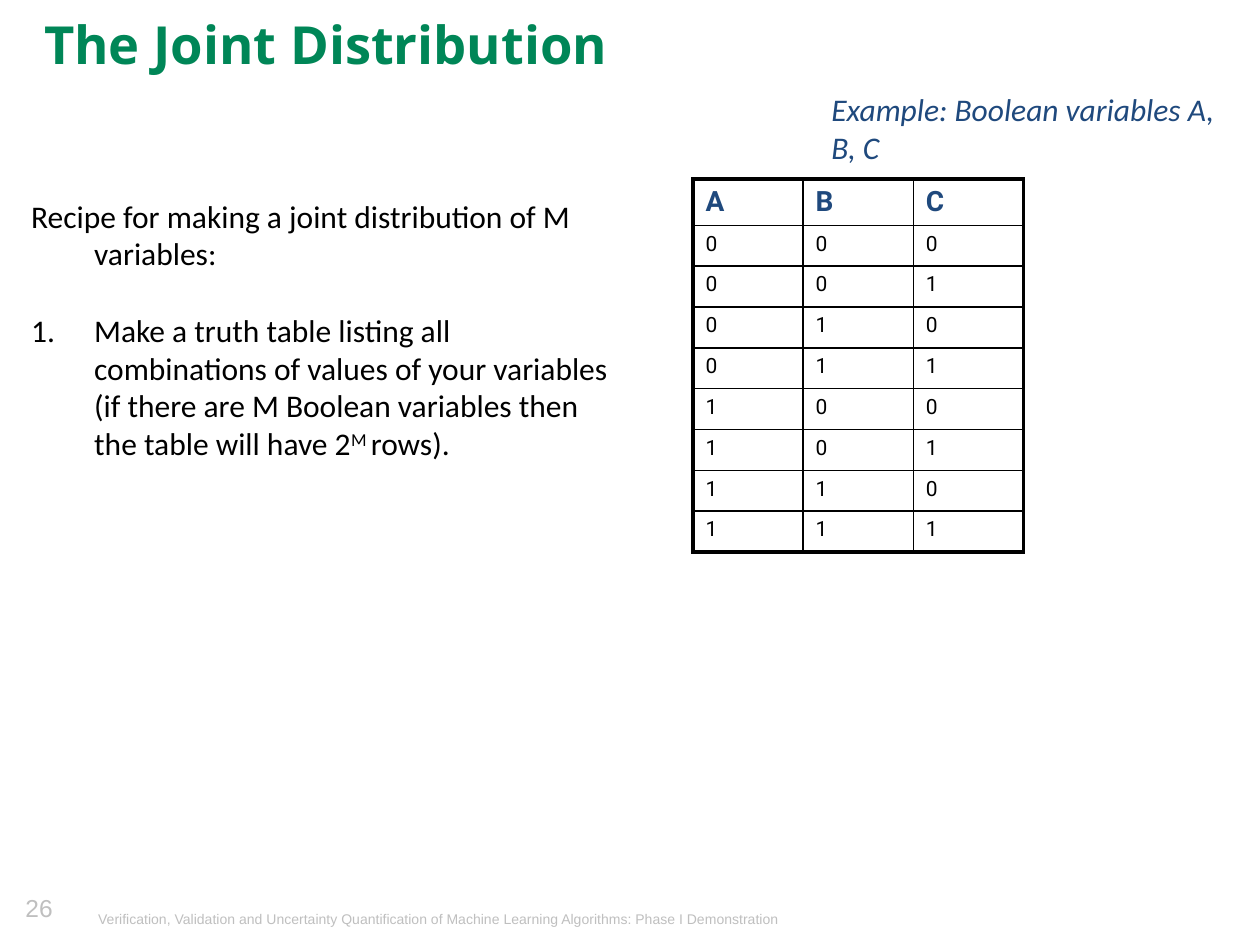
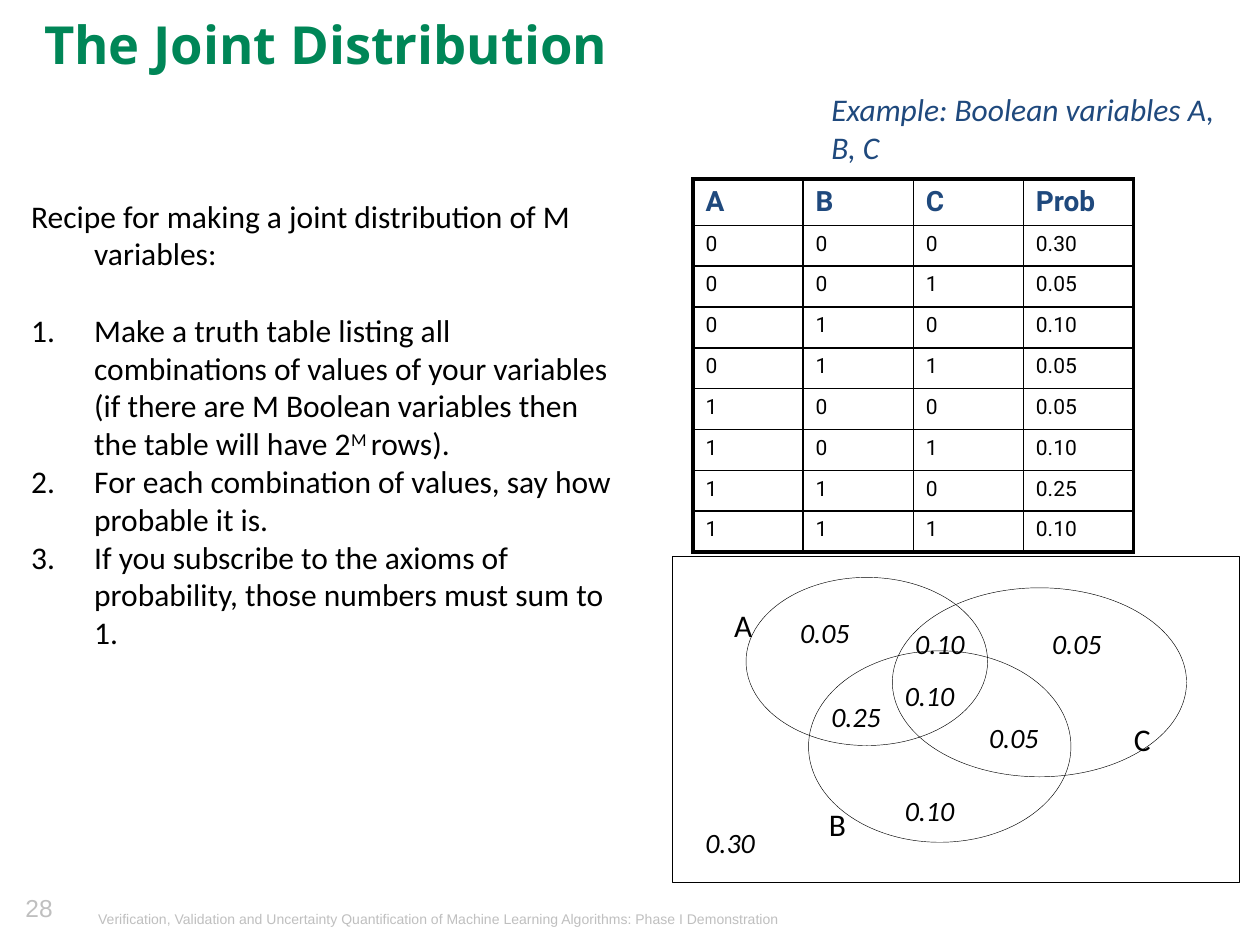
from dataclasses import dataclass
from itertools import product

from lxml import etree
from pptx import Presentation
from pptx.dml.color import RGBColor
from pptx.enum.shapes import MSO_SHAPE
from pptx.enum.text import MSO_ANCHOR, PP_ALIGN
from pptx.oxml.ns import qn
from pptx.util import Cm, Pt

RECTANGLE, ELLIPSE = MSO_SHAPE.RECTANGLE, MSO_SHAPE.OVAL
LEFT, CENTER = PP_ALIGN.LEFT, PP_ALIGN.CENTER
TOP = MSO_ANCHOR.TOP


@dataclass(frozen=True)
class Theme:
    green: str = "008657"
    navy: str = "1F497D"
    black: str = "000000"
    grey: str = "BFBFBF"
    title_font: str = "Open Sans"
    body_font: str = "Calibri"
    table_font: str = "Roboto"
    footer_font: str = "Arial"
    title_size: float = 30
    body_size: float = 18
    value_size: float = 16
    header_size: float = 16
    cell_size: float = 12
    number_size: float = 14
    footer_size: float = 8
    outer_border: float = 2.25
    inner_border: float = 1
    outline: float = 0.25


THEME = Theme()

TITLE = "The Joint Distribution"
FOOTER = ("Verification, Validation and Uncertainty Quantification of "
          "Machine Learning Algorithms: Phase I Demonstration")
EXAMPLE = "Example: Boolean variables A, B, C"
RECIPE = "Recipe for making a joint distribution of M variables:"
# A step is a list of (text, is superscript) pieces
STEPS = [
    [("Make a truth table listing all combinations of values of your variables "
      "(if there are M Boolean variables then the table will have 2", False),
     ("M ", True), ("rows).", False)],
    [("For each combination of values, say how probable it is.", False)],
    [("If you subscribe to the axioms of probability, those numbers must sum to 1.",
      False)],
]

VARIABLES = ["A", "B", "C"]
COMBINATIONS = list(product("01", repeat=len(VARIABLES)))
PROBABILITIES = ["0.30", "0.05", "0.10", "0.05", "0.05", "0.10", "0.25", "0.10"]

# Venn diagram, in cm; value positions follow the order of COMBINATIONS
VENN_FRAME = (13.55, 11.22, 11.43, 6.56)
VENN_SETS = {
    "A": (15.04, 11.64, 4.87, 3.39),
    "B": (16.3, 13.12, 5.29, 3.86),
    "C": (17.99, 11.85, 5.93, 3.81),
}
SET_LABELS = {"A": (14.55, 12.09), "B": (16.46, 16.1), "C": (22.61, 14.4)}
VALUE_POSITIONS = [
    (13.97, 16.51), (20.96, 12.5), (17.99, 15.88), (19.69, 14.4),
    (15.88, 12.28), (18.2, 12.5), (16.51, 13.97), (17.99, 13.55),
]


def write_text(para, text, *, size, font=THEME.body_font, color=THEME.black,
               bold=False, italic=False, superscript=False, align=LEFT,
               line_spacing=None):
    """Append one formatted span to a paragraph."""
    para.alignment = align
    if line_spacing:
        para.line_spacing = line_spacing
    span = para.add_run()
    span.text = text
    span.font.name = font
    span.font.size = Pt(size)
    span.font.bold = bold
    span.font.italic = italic
    span.font.color.rgb = RGBColor.from_string(color)
    if superscript:
        span._r.get_or_add_rPr().set("baseline", "30000")


def add_box(page, place, wrap=True, inset=True):
    """Add an empty text box and return its text frame."""
    frame = page.shapes.add_textbox(*map(Cm, place)).text_frame
    frame.word_wrap = wrap
    frame.vertical_anchor = TOP
    if not inset:
        frame.margin_left = frame.margin_right = 0
        frame.margin_top = frame.margin_bottom = 0
    return frame


def add_label(page, place, text, wrap=True, inset=True, **text_format):
    write_text(add_box(page, place, wrap, inset).paragraphs[0], text, **text_format)


def set_hanging_indent(para, numbered=False):
    properties = para._p.get_or_add_pPr()
    properties.set("marL", str(Cm(1.27)))
    properties.set("indent", str(-Cm(1.27)))
    if numbered:
        etree.SubElement(properties, qn("a:buAutoNum"), type="arabicPeriod")


def add_recipe(page, steps):
    frame = add_box(page, (0.38, 3.84, 12.32, 7.04))
    intro = frame.paragraphs[0]
    set_hanging_indent(intro)
    intro.space_after = Pt(22)
    write_text(intro, RECIPE, size=THEME.body_size)
    for step in steps:
        para = frame.add_paragraph()
        set_hanging_indent(para, numbered=True)
        for text, superscript in step:
            write_text(para, text, size=THEME.body_size, superscript=superscript)


def set_borders(cell, outer_sides):
    """Draw all four borders, heavier on the outer sides of the table."""
    properties = cell._tc.get_or_add_tcPr()
    for position, side in enumerate("LRTB"):
        width = THEME.outer_border if side in outer_sides else THEME.inner_border
        line = etree.Element(qn(f"a:ln{side}"), w=str(Pt(width)))
        fill = etree.SubElement(line, qn("a:solidFill"))
        etree.SubElement(fill, qn("a:srgbClr"), val=THEME.black)
        properties.insert(position, line)


def add_truth_table(page, header, rows):
    column_width, header_height, total_height = 2.22, 0.91, 7.5
    row_height = (total_height - header_height) / len(rows)
    lines = [header, *rows]
    table = page.shapes.add_table(
        len(lines), len(header), Cm(13.97), Cm(3.61),
        Cm(column_width * len(header)), Cm(total_height)).table
    table.first_row = table.horz_banding = False
    for column in table.columns:
        column.width = Cm(column_width)
    last_row, last_column = len(lines) - 1, len(header) - 1
    for r, values in enumerate(lines):
        table.rows[r].height = Cm(row_height if r else header_height)
        for c, value in enumerate(values):
            cell = table.cell(r, c)
            cell.fill.background()
            edges = {"L": c == 0, "R": c == last_column,
                     "T": r == 0, "B": r == last_row}
            set_borders(cell, [side for side, is_outer in edges.items() if is_outer])
            write_text(cell.text_frame.paragraphs[0], value,
                       font=THEME.table_font, bold=r == 0,
                       size=THEME.cell_size if r else THEME.header_size,
                       color=THEME.black if r else THEME.navy)


def add_outline(page, kind, place):
    shape = page.shapes.add_shape(kind, *map(Cm, place))
    shape.shadow.inherit = False
    shape.fill.background()
    shape.line.color.rgb = RGBColor.from_string(THEME.black)
    shape.line.width = Pt(THEME.outline)


def add_venn_diagram(page):
    add_outline(page, RECTANGLE, VENN_FRAME)
    for place in VENN_SETS.values():
        add_outline(page, ELLIPSE, place)
    for name, position in SET_LABELS.items():
        add_label(page, (*position, 0.94, 1.09), name, wrap=False,
                  size=THEME.body_size)
    for value, position in zip(PROBABILITIES, VALUE_POSITIONS):
        add_label(page, (*position, 1.6, 0.94), value, wrap=False,
                  size=THEME.value_size, italic=True)


def add_page(deck, number):
    """Add a page with the shared title, example line and footer."""
    page = deck.slides.add_slide(deck.slide_layouts[6])
    add_label(page, (0.36, 18.06, 0.86, 0.84), str(number), inset=False,
              size=THEME.number_size, font=THEME.footer_font, color=THEME.grey,
              align=CENTER, line_spacing=0.9)
    add_label(page, (1.73, 18.24, 15.6, 0.51), FOOTER, size=THEME.footer_size,
              font=THEME.footer_font, color=THEME.grey)
    add_label(page, (0.64, 0, 15.88, 2.11), TITLE, size=THEME.title_size,
              font=THEME.title_font, color=THEME.green, bold=True,
              line_spacing=1.1)
    add_label(page, (16.51, 1.7, 8.46, 1.96), EXAMPLE, size=THEME.body_size,
              color=THEME.navy, italic=True)
    return page


def main():
    deck = Presentation()
    deck.slide_width, deck.slide_height = Cm(25.4), Cm(19.05)

    # Truth table only
    page = add_page(deck, 26)
    add_recipe(page, STEPS[:1])
    add_truth_table(page, VARIABLES, COMBINATIONS)

    # Probabilities and Venn diagram
    page = add_page(deck, 28)
    add_recipe(page, STEPS)
    rows = [(*values, chance) for values, chance in zip(COMBINATIONS, PROBABILITIES)]
    add_truth_table(page, [*VARIABLES, "Prob"], rows)
    add_venn_diagram(page)

    deck.save("out.pptx")


if __name__ == "__main__":
    main()
